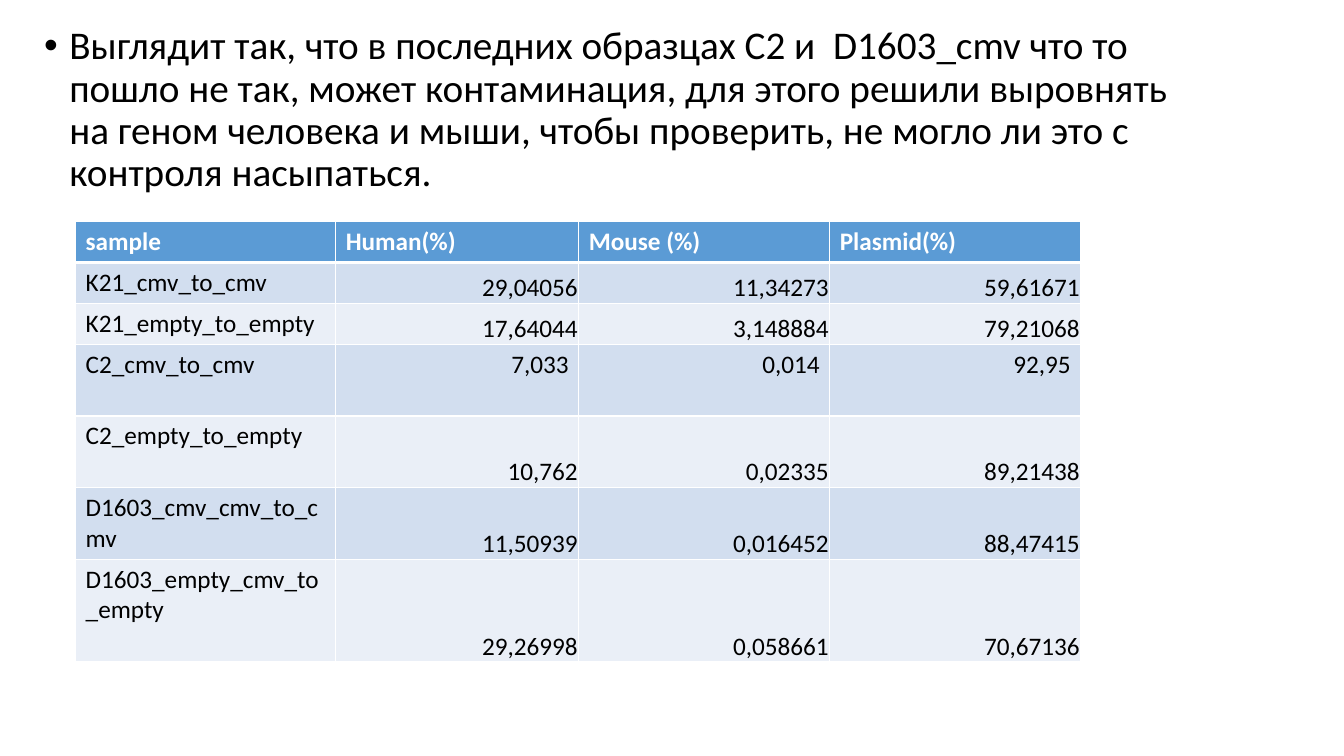
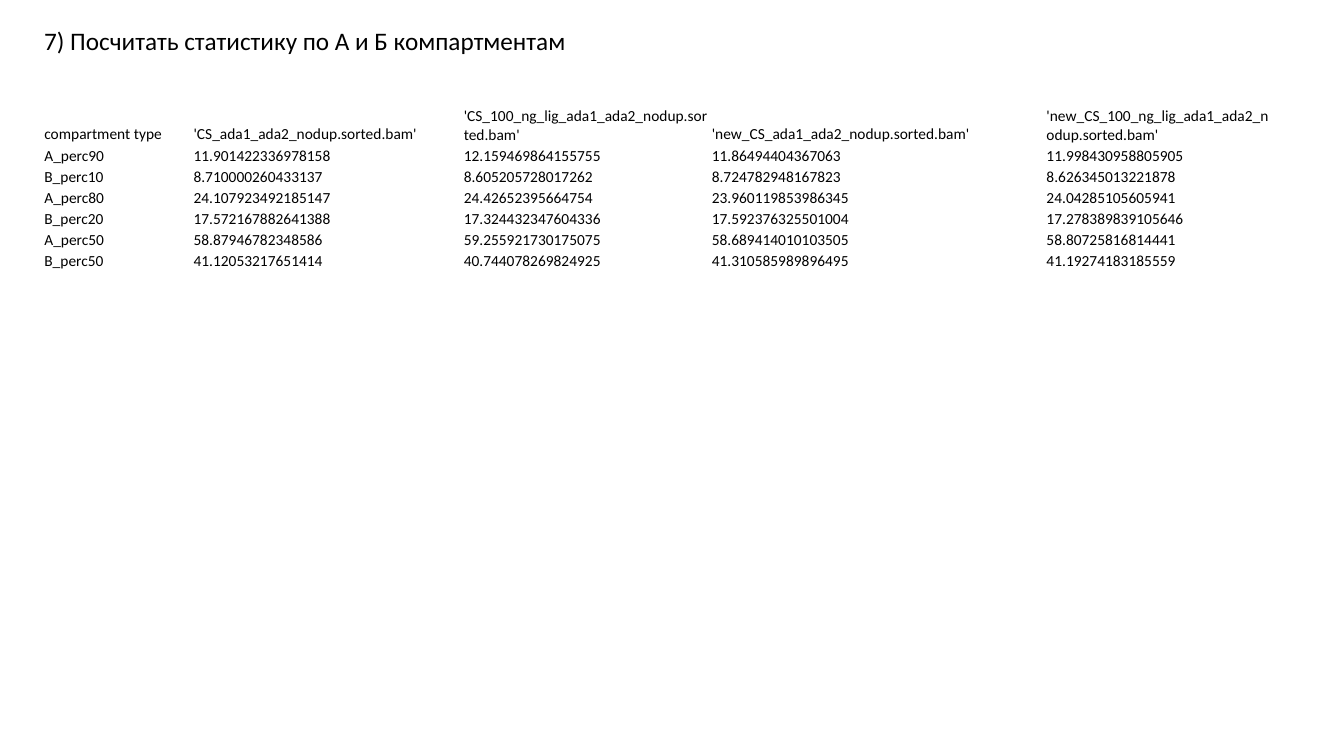
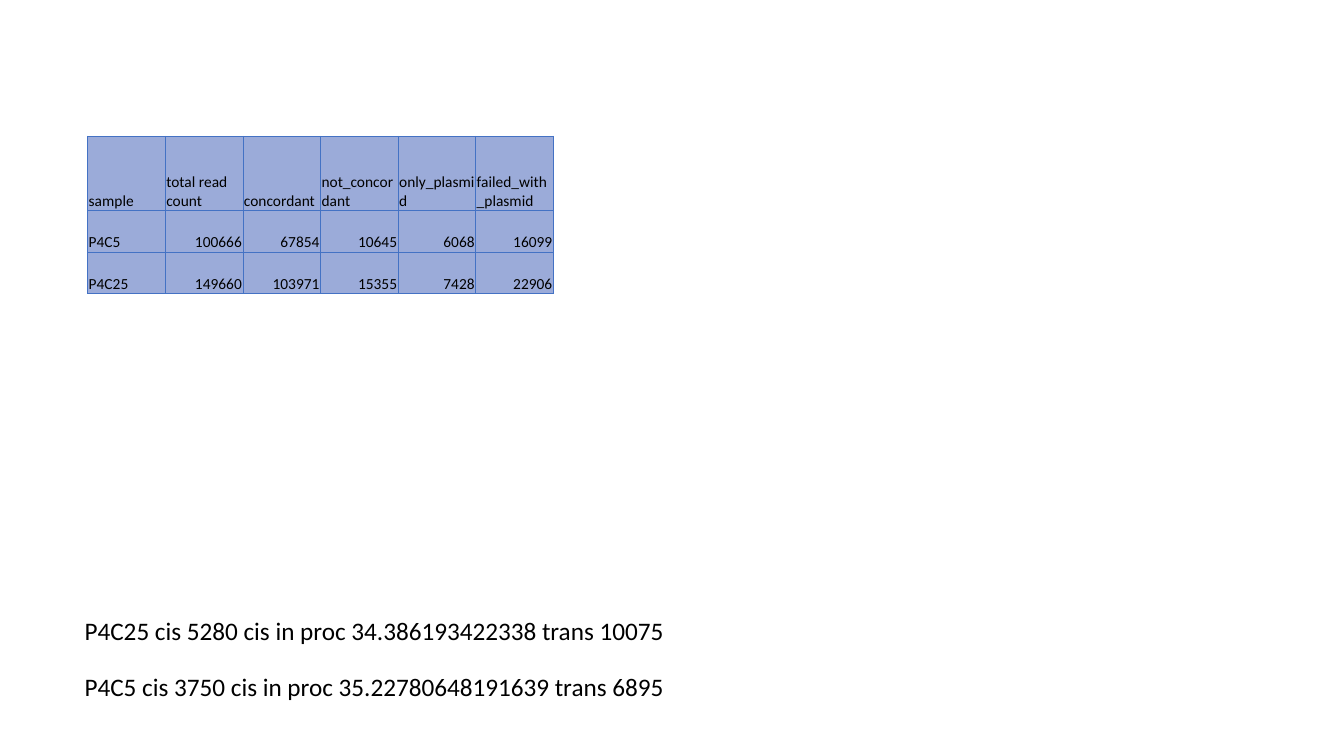
from lxml.etree import SubElement
from pptx import Presentation
from pptx.dml.color import RGBColor
from pptx.enum.text import MSO_ANCHOR as Anchor, MSO_AUTO_SIZE as AutoSize, PP_ALIGN as Align
from pptx.oxml.ns import qn
from pptx.util import Inches, Pt

FONT = "Calibri"
COLORS = {
    "text": "000000",
    "white": "FFFFFF",
    "header": "5B9BD5",
    "band_dark": "D2DEEF",
    "band_light": "EAEFF7",
    "grid": "4472C4",
    "grid_fill": "9BABD9",
}

ALIGNMENT_HEADER = ["sample", "Human(%)", "Mouse (%)", "Plasmid(%)"]
ALIGNMENT_ROWS = [
    ["K21_cmv_to_cmv", "29,04056", "11,34273", "59,61671"],
    ["K21_empty_to_empty", "17,64044", "3,148884", "79,21068"],
    ["C2_cmv_to_cmv", "7,033", "0,014", "92,95"],
    ["C2_empty_to_empty", "10,762", "0,02335", "89,21438"],
    ["D1603_cmv_cmv_to_cmv", "11,50939", "0,016452", "88,47415"],
    ["D1603_empty_cmv_to_empty", "29,26998", "0,058661", "70,67136"],
]
COMPARTMENT_ROWS = [
    ["compartment type", "'CS_ada1_ada2_nodup.sorted.bam'",
     "'CS_100_ng_lig_ada1_ada2_nodup.sorted.bam'",
     "'new_CS_ada1_ada2_nodup.sorted.bam'",
     "'new_CS_100_ng_lig_ada1_ada2_nodup.sorted.bam'"],
    ["A_perc90", "11.901422336978158", "12.159469864155755", "11.86494404367063", "11.998430958805905"],
    ["B_perc10", "8.710000260433137", "8.605205728017262", "8.724782948167823", "8.626345013221878"],
    ["A_perc80", "24.107923492185147", "24.42652395664754", "23.960119853986345", "24.04285105605941"],
    ["B_perc20", "17.572167882641388", "17.324432347604336", "17.592376325501004", "17.278389839105646"],
    ["A_perc50", "58.87946782348586", "59.255921730175075", "58.689414010103505", "58.80725816814441"],
    ["B_perc50", "41.12053217651414", "40.744078269824925", "41.310585989896495", "41.19274183185559"],
]
READ_ROWS = [
    ["sample", "total read count", "concordant", "not_concordant", "only_plasmid", "failed_with_plasmid"],
    ["P4C5", "100666", "67854", "10645", "6068", "16099"],
    ["P4C25", "149660", "103971", "15355", "7428", "22906"],
]


# Text
def write_text(frame, text, size=18, color="text", bold=False, align=Align.LEFT):
    paragraph = frame.paragraphs[0]
    paragraph.alignment = align
    run = paragraph.add_run()
    run.text = text
    run.font.name = FONT
    run.font.size = Pt(size)
    run.font.bold = bold
    run.font.color.rgb = RGBColor.from_string(COLORS[color])
    return paragraph


def add_text_box(slide, left, top, width, height, text, wrap=False, **text_format):
    box = slide.shapes.add_textbox(Inches(left), Inches(top), Inches(width), Inches(height))
    frame = box.text_frame
    frame.word_wrap = wrap
    frame.auto_size = AutoSize.NONE if wrap else AutoSize.SHAPE_TO_FIT_TEXT
    return write_text(frame, text, **text_format)


def add_bullet(paragraph, indent):
    properties = paragraph._p.get_or_add_pPr()
    properties.set("marL", str(Inches(indent)))
    properties.set("indent", str(-Inches(indent)))
    SubElement(properties, qn("a:buFont"), typeface="Arial")
    SubElement(properties, qn("a:buChar"), char="•")


# Tables
def set_borders(cell, color, width, bottom_width=None):
    properties = cell._tc.get_or_add_tcPr()
    for side in "LRTB":
        points = bottom_width if side == "B" and bottom_width else width
        line = SubElement(properties, qn(f"a:ln{side}"), w=str(Pt(points)))
        fill = SubElement(line, qn("a:solidFill"))
        SubElement(fill, qn("a:srgbClr"), val=COLORS[color])


def format_cell(cell, text, tight=True, fill=None, border=None, **text_format):
    if border:
        set_borders(cell, *border)
    if fill:
        cell.fill.solid()
        cell.fill.fore_color.rgb = RGBColor.from_string(COLORS[fill])
    else:
        cell.fill.background()
    if tight:
        cell.vertical_anchor = Anchor.BOTTOM
        cell.margin_left = cell.margin_right = cell.margin_top = Inches(0.01)
        cell.margin_bottom = 0
    write_text(cell.text_frame, text, **text_format)


def add_table(slide, left, top, widths, heights, rows, cell_format):
    """cell_format(row, column) gives the keyword arguments of format_cell."""
    table = slide.shapes.add_table(
        len(rows), len(widths), Inches(left), Inches(top),
        Inches(sum(widths)), Inches(sum(heights))).table
    table.first_row = table.horz_banding = False
    for column, width in zip(table.columns, widths):
        column.width = Inches(width)
    for row, height in zip(table.rows, heights):
        row.height = Inches(height)
    for r, values in enumerate(rows):
        for c, text in enumerate(values):
            format_cell(table.cell(r, c), text, **cell_format(r, c))


def number_align(row, column):
    return Align.RIGHT if row and column else Align.LEFT


def alignment_format(row, column):
    if row == 0:
        return dict(tight=False, fill="header", border=("white", 1, 3), color="white", bold=True)
    top_aligned = column == 0 or ALIGNMENT_ROWS[row - 1][0] == "C2_cmv_to_cmv"
    return dict(tight=not top_aligned, fill="band_dark" if row % 2 else "band_light",
                border=("white", 1), align=number_align(row, column))


def compartment_format(row, column):
    return dict(size=11)


def read_format(row, column):
    return dict(size=11, fill="grid_fill", border=("grid", 0.5), align=number_align(row, column))


# Slides
def build_alignment_slide(slide):
    paragraph = add_text_box(
        slide, 0.34, 0.21, 11.5, 1.9,
        "Выглядит так, что в последних образцах C2 и  D1603_cmv что то пошло не так, "
        "может контаминация, для этого решили выровнять на геном человека и мыши, "
        "чтобы проверить, не могло ли это с контроля насыпаться.",
        wrap=True, size=28)
    paragraph.line_spacing = 0.9
    paragraph.space_before = Pt(10)
    add_bullet(paragraph, 0.25)
    add_table(slide, 0.75, 2.2, [2.58, 2.41, 2.49, 2.49], [0.4] * 3 + [0.71] * 3 + [1.02],
              [ALIGNMENT_HEADER] + ALIGNMENT_ROWS, alignment_format)


def build_compartment_slide(slide):
    add_text_box(slide, 0.34, 0.2, 5.44, 0.4, "7) Посчитать статистику по А и Б компартментам")
    add_table(slide, 0.43, 1.05, [1.48, 2.68, 2.46, 3.32, 2.26], [0.38] + [0.21] * 6,
              COMPARTMENT_ROWS, compartment_format)


def build_read_slide(slide):
    add_table(slide, 0.87, 1.35, [0.77] * 6, [0.74, 0.41, 0.41], READ_ROWS, read_format)
    lines = ["P4C25 cis 5280 cis in proc 34.386193422338 trans 10075",
             "P4C5 cis 3750 cis in proc 35.22780648191639 trans 6895"]
    for index, text in enumerate(lines):
        add_text_box(slide, 0.74, 6.06 + 0.55 * index, 6.01, 0.4, text)


def main():
    presentation = Presentation()
    presentation.slide_width = Inches(13.33)
    presentation.slide_height = Inches(7.5)
    blank = presentation.slide_layouts[6]
    for build in (build_alignment_slide, build_compartment_slide, build_read_slide):
        build(presentation.slides.add_slide(blank))
    presentation.save("out.pptx")


if __name__ == "__main__":
    main()
